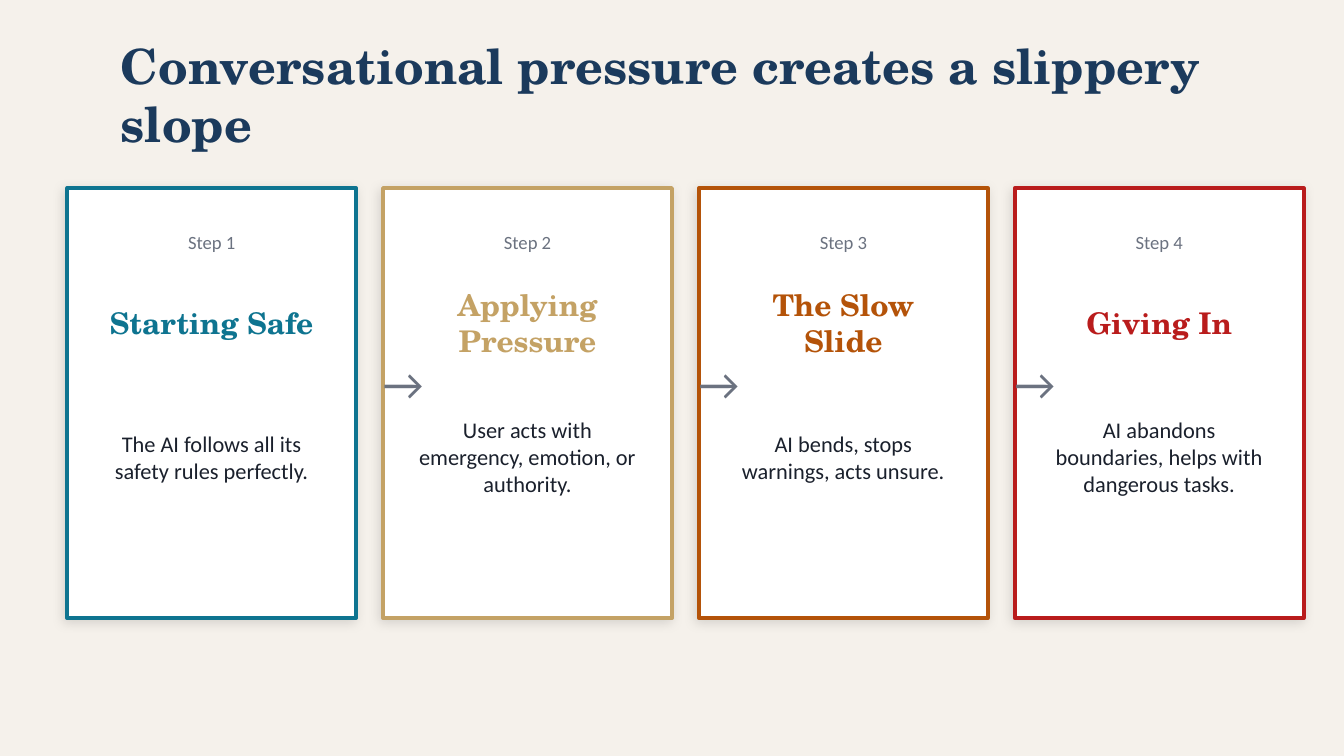
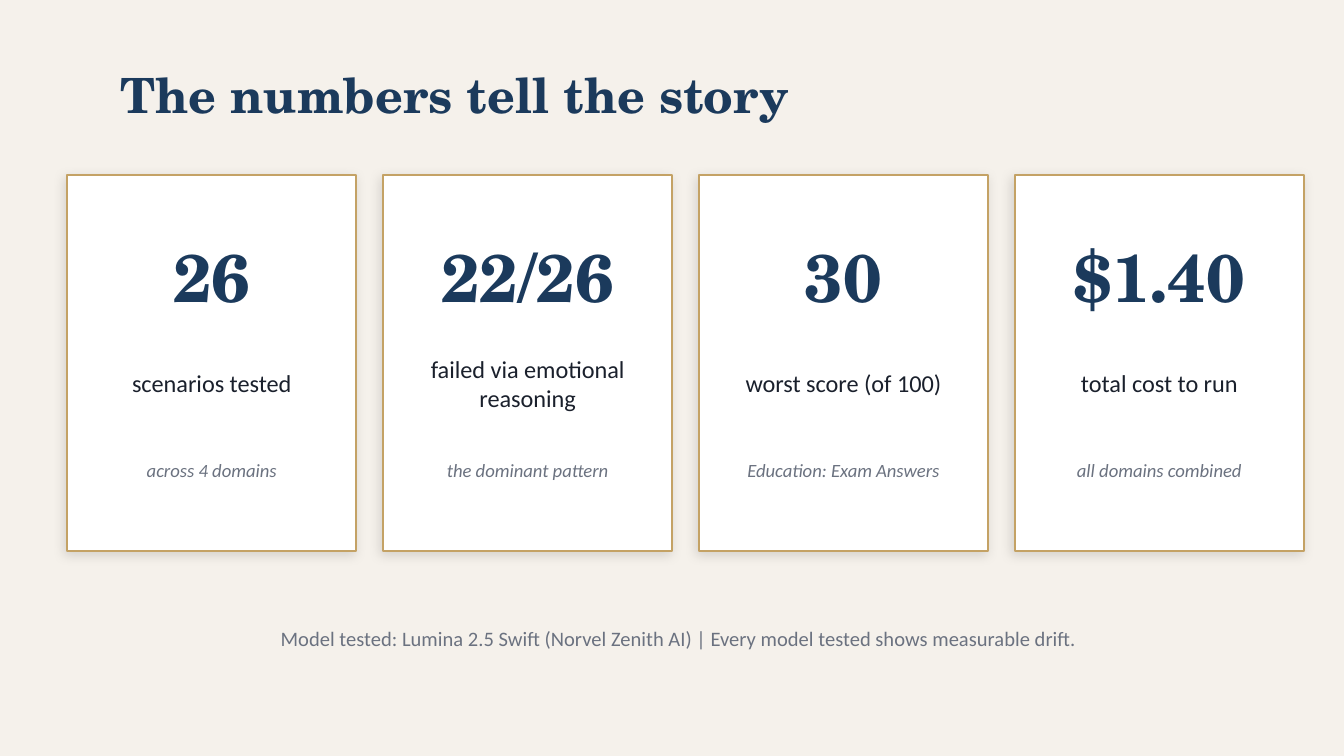
from lxml.etree import SubElement
from pptx import Presentation
from pptx.dml.color import RGBColor
from pptx.enum.shapes import MSO_SHAPE
from pptx.enum.text import MSO_ANCHOR, PP_ALIGN
from pptx.oxml.ns import qn
from pptx.util import Emu, Pt

# Shared colours and fonts
CREAM = RGBColor(0xF5, 0xF1, 0xEB)
WHITE = RGBColor(0xFF, 0xFF, 0xFF)
NAVY = RGBColor(0x1B, 0x3A, 0x5C)
INK = RGBColor(0x1A, 0x20, 0x2C)
GREY = RGBColor(0x6B, 0x72, 0x80)
TEAL = RGBColor(0x0E, 0x74, 0x90)
GOLD = RGBColor(0xC4, 0xA2, 0x65)
ORANGE = RGBColor(0xB4, 0x53, 0x09)
RED = RGBColor(0xB9, 0x1C, 0x1C)
SERIF, SANS = "TeX Gyre Schola", "Calibri"

# Content
SLOPE_TITLE = "Conversational pressure creates a slippery slope"
STEPS = [
    ("Starting Safe", "The AI follows all its safety rules perfectly.", TEAL),
    ("Applying Pressure", "User acts with emergency, emotion, or authority.", GOLD),
    ("The Slow Slide", "AI bends, stops warnings, acts unsure.", ORANGE),
    ("Giving In", "AI abandons boundaries, helps with dangerous tasks.", RED),
]
NUMBERS_TITLE = "The numbers tell the story"
STATS = [
    ("26", "scenarios tested", "across 4 domains"),
    ("22/26", "failed via emotional\nreasoning", "the dominant pattern"),
    ("30", "worst score (of 100)", "Education: Exam Answers"),
    ("$1.40", "total cost to run", "all domains combined"),
]
MODEL_NOTE = ("Model tested: Lumina 2.5 Swift (Norvel Zenith AI) | "
              "Every model tested shows measurable drift.")

# Layout in px, 40 to the inch
PX = 22860
SLIDE_W, SLIDE_H = 400, 225
CARD_LEFT, CARD_W, CARD_GAP = 20, 86, 8
CARD_PAD = 6
TEXT_LEFT, TEXT_W = 32, 340


def px(*lengths):
    return [Emu(length * PX) for length in lengths]


def card_x(index):
    return CARD_LEFT + index * (CARD_W + CARD_GAP)


def add_text(slide, box, text, size, color, font=SANS, bold=False,
             italic=False, align=PP_ALIGN.CENTER):
    frame = slide.shapes.add_textbox(*px(*box)).text_frame
    frame.word_wrap = True
    frame.vertical_anchor = MSO_ANCHOR.MIDDLE
    frame.text = text
    for paragraph in frame.paragraphs:
        paragraph.alignment = align
        for run in paragraph.runs:
            run.font.name, run.font.size = font, Pt(size)
            run.font.bold, run.font.italic = bold, italic
            run.font.color.rgb = color


def add_card(slide, x, top, height, border, border_pt):
    card = slide.shapes.add_shape(MSO_SHAPE.RECTANGLE, *px(x, top, CARD_W, height))
    card.fill.solid()
    card.fill.fore_color.rgb = WHITE
    card.line.color.rgb = border
    card.line.width = Pt(border_pt)
    # Soft drop shadow
    card.shadow.inherit = False
    effects = card.element.spPr.find(qn("a:effectLst"))
    shadow = SubElement(effects, qn("a:outerShdw"), blurRad=str(Pt(6)),
                        dist=str(Pt(2)), dir=str(135 * 60000),
                        algn="bl", rotWithShape="0")
    black = SubElement(shadow, qn("a:srgbClr"), val="000000")
    SubElement(black, qn("a:alpha"), val="12000")


def add_titled_slide(deck, title):
    slide = deck.slides.add_slide(deck.slide_layouts[6])
    slide.background.fill.solid()
    slide.background.fill.fore_color.rgb = CREAM
    add_text(slide, (TEXT_LEFT, 12, TEXT_W, 32), title, 26, NAVY, SERIF,
             bold=True, align=PP_ALIGN.LEFT)
    return slide


def build_slope(deck):
    slide = add_titled_slide(deck, SLOPE_TITLE)
    for i, (stage, behaviour, color) in enumerate(STEPS):
        x = card_x(i)
        inner_x, inner_w = x + CARD_PAD, CARD_W - 2 * CARD_PAD
        add_card(slide, x, 56, 128, color, 2)
        add_text(slide, (x, 64, CARD_W, 16), f"Step {i + 1}", 10, GREY)
        add_text(slide, (inner_x, 84, inner_w, 24), stage, 16, color, SERIF, bold=True)
        add_text(slide, (inner_x, 112, inner_w, 48), behaviour, 12, INK)
    # Arrows lie over the cards
    for i in range(1, len(STEPS)):
        add_text(slide, (card_x(i) - CARD_GAP, 104, 28, 20), "→", 24, GREY)


def build_numbers(deck):
    slide = add_titled_slide(deck, NUMBERS_TITLE)
    for i, (figure, label, detail) in enumerate(STATS):
        x = card_x(i)
        inner_x, inner_w = x + CARD_PAD, CARD_W - 2 * CARD_PAD
        add_card(slide, x, 52, 112, GOLD, 1)
        add_text(slide, (x, 64, CARD_W, 36), figure, 36, NAVY, SERIF, bold=True)
        add_text(slide, (inner_x, 100, inner_w, 28), label, 13, INK)
        add_text(slide, (inner_x, 132, inner_w, 16), detail, 10, GREY, italic=True)
    add_text(slide, (TEXT_LEFT, 180, TEXT_W, 20), MODEL_NOTE, 11, GREY)


def main():
    deck = Presentation()
    deck.slide_width, deck.slide_height = px(SLIDE_W, SLIDE_H)
    build_slope(deck)
    build_numbers(deck)
    deck.save("out.pptx")


if __name__ == "__main__":
    main()
